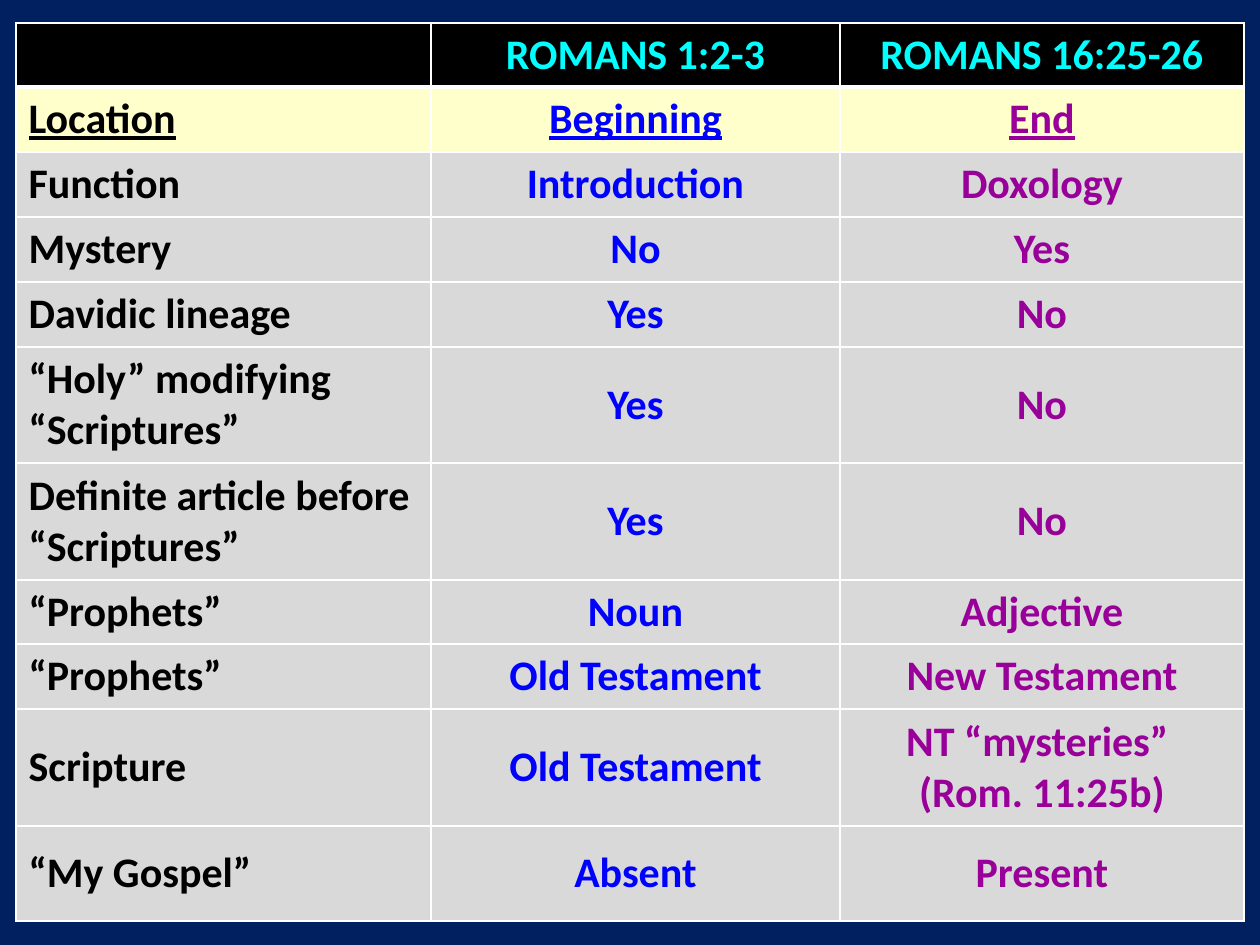
from lxml.etree import SubElement
from pptx import Presentation
from pptx.dml.color import RGBColor
from pptx.enum.text import MSO_ANCHOR, PP_ALIGN
from pptx.oxml.ns import qn
from pptx.util import Emu, Pt


def px(n):
    return Emu(round(n * 914400 / 126))


def paint(fill, color):
    fill.solid()
    fill.fore_color.rgb = RGBColor.from_string(color)


rows = [
    ("", "ROMANS 1:2-3", "ROMANS 16:25-26"),
    ("Location", "Beginning", "End"),
    ("Function", "Introduction", "Doxology"),
    ("Mystery", "No", "Yes"),
    ("Davidic lineage", "Yes", "No"),
    ("“Holy” modifying “Scriptures”", "Yes", "No"),
    ("Definite article before “Scriptures”", "Yes", "No"),
    ("“Prophets”", "Noun", "Adjective"),
    ("“Prophets”", "Old Testament", "New Testament"),
    ("Scripture", "Old Testament", "NT “mysteries” \n(Rom. 11:25b)"),
    ("“My Gospel”", "Absent", "Present"),
]
widths = [415, 409, 404]
heights = [64, 65, 65, 65, 65, 116, 117, 64, 65, 117, 95]
fills = ["000000", "FFFFCC"] + ["D9D9D9"] * 9
inks = ["000000", "0000FF", "990099"]
look = {"name": "Calibri", "size": Pt(24), "bold": True}

prs = Presentation()
prs.slide_width, prs.slide_height = px(1260), px(945)
slide = prs.slides.add_slide(prs.slide_layouts[6])
paint(slide.background.fill, "002060")

frame = slide.shapes.add_table(
    len(rows), len(widths), px(16), px(23), px(sum(widths)), px(sum(heights))
)
table = frame.table
for col, width in zip(table.columns, widths):
    col.width = px(width)

for r, texts in enumerate(rows):
    table.rows[r].height = px(heights[r])
    edges = {"lnL": 1, "lnR": 1, "lnT": 3 if r == 1 else 1, "lnB": 3 if r == 0 else 1}
    for c, text in enumerate(texts):
        cell = table.cell(r, c)
        props = cell._tc.get_or_add_tcPr()
        for tag, size in edges.items():
            line = SubElement(props, qn("a:" + tag), w=str(Pt(size)))
            solid = SubElement(line, qn("a:solidFill"))
            SubElement(solid, qn("a:srgbClr"), val="FFFFFF")
        paint(cell.fill, fills[r])
        cell.vertical_anchor = MSO_ANCHOR.MIDDLE if r else MSO_ANCHOR.TOP
        cell.text = text
        for para in cell.text_frame.paragraphs:
            para.alignment = PP_ALIGN.CENTER if c else PP_ALIGN.LEFT
            for run in para.runs:
                for key, value in {**look, "underline": r == 1}.items():
                    setattr(run.font, key, value)
                paint(run.font.fill, inks[c] if r else "00FFFF")

prs.save("out.pptx")
